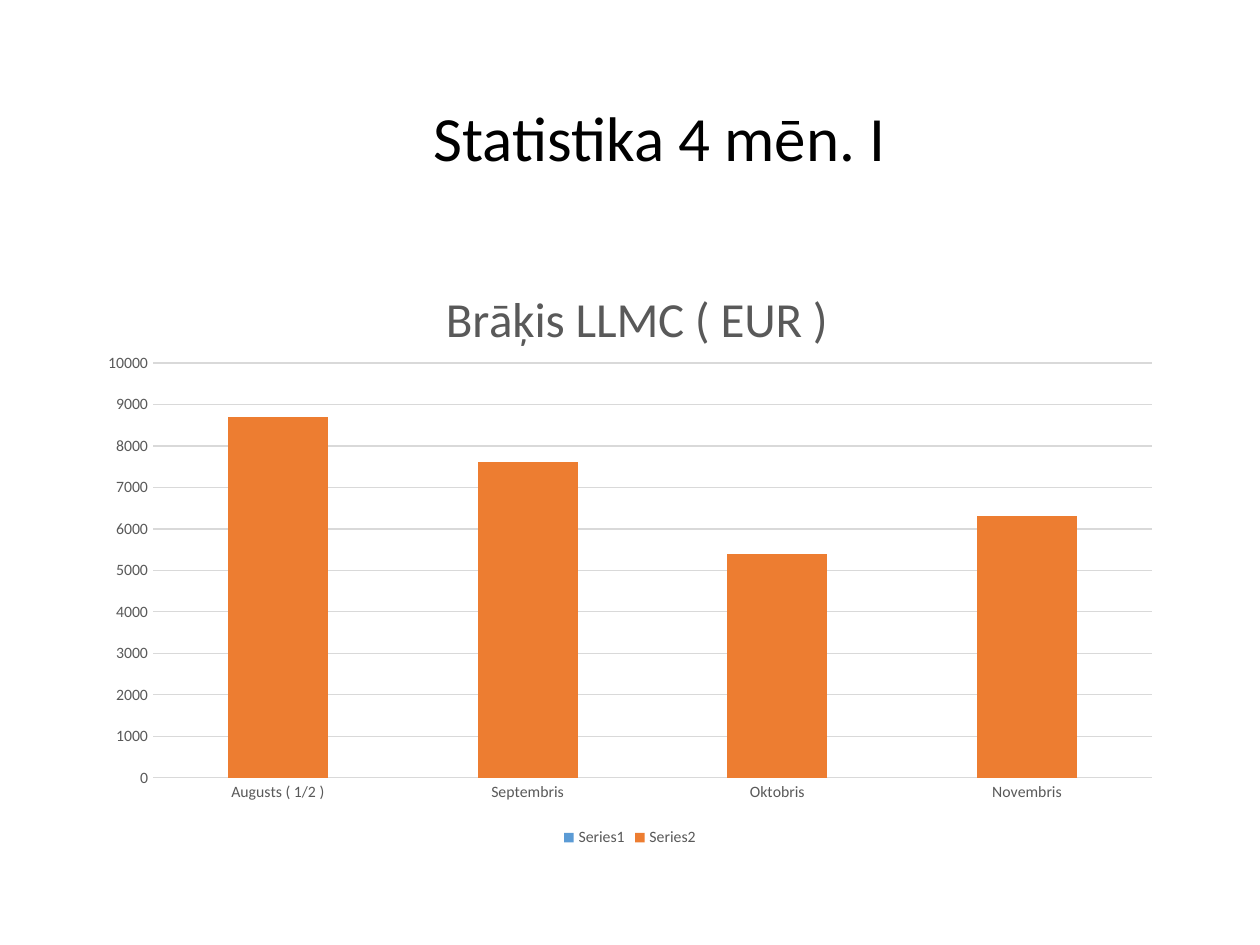
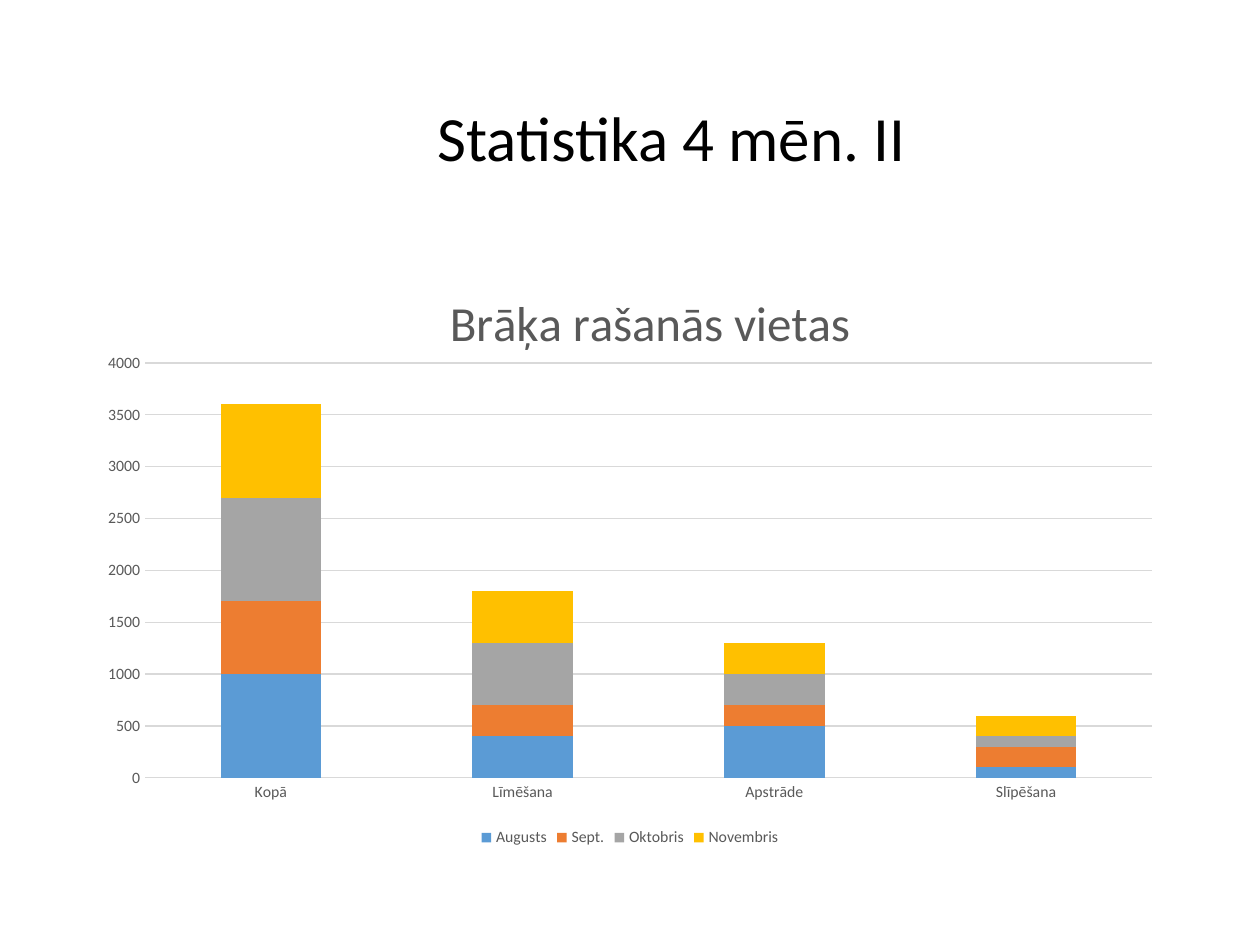
import dataclasses

import lxml.etree
import pptx
import pptx.chart.chart
import pptx.chart.data
import pptx.dml.color
import pptx.enum.chart
import pptx.enum.text
import pptx.oxml.ns
import pptx.slide
import pptx.text.text
import pptx.util

PX_PER_INCH = 126
FONT = "Calibri"
COLORS = {
    "heading": "000000",
    "label": "595959",
    "grid": "D9D9D9",
    "blue": "5B9BD5",
    "orange": "ED7D31",
    "gray": "A5A5A5",
    "gold": "FFC000",
}
HEADING_BOX = (87, 50, 1086, 183)
CHART_BOX = (87, 252, 1086, 600)


@dataclasses.dataclass(frozen=True)
class Month:
    name: str
    color: str
    values: tuple[int | None, ...]


@dataclasses.dataclass(frozen=True)
class Statistics:
    heading: str
    heading_indent: int
    chart_heading: str
    chart_heading_at: tuple[int, int]
    plot_box: tuple[int, int, int, int]
    axis_max: int
    axis_step: int
    categories: tuple[str, ...]
    months: tuple[Month, ...]


STATISTICS = (
    Statistics(
        "Statistika 4 mēn. I", 334,
        "Brāķis LLMC ( EUR )", (437, 277), (153, 363, 999, 415), 10000, 1000,
        ("Augusts ( 1/2 )", "Septembris", "Oktobris", "Novembris"),
        (
            Month("Series1", "blue", (None, None, None, None)),
            Month("Series2", "orange", (8700, 7600, 5400, 6300)),
        ),
    ),
    Statistics(
        "Statistika 4 mēn. II", 338,
        "Brāķa rašanās vietas", (441, 281), (145, 363, 1007, 415), 4000, 500,
        ("Kopā", "Līmēšana", "Apstrāde", "Slīpēšana"),
        (
            Month("Augusts", "blue", (1000, 400, 500, 100)),
            Month("Sept.", "orange", (700, 300, 200, 200)),
            Month("Oktobris", "gray", (1000, 600, 300, 100)),
            Month("Novembris", "gold", (900, 500, 300, 200)),
        ),
    ),
)


def px(length: int) -> int:
    return round(length * 914400 / PX_PER_INCH)


def rgb(name: str) -> pptx.dml.color.RGBColor:
    return pptx.dml.color.RGBColor.from_string(COLORS[name])


def style_font(font: pptx.text.text.Font, size: int, color: str) -> None:
    font.name = FONT
    font.size = pptx.util.Pt(size)
    font.bold = False
    font.color.rgb = rgb(color)


def write_text(frame: pptx.text.text.TextFrame, text: str, *, size: int, color: str,
               indent: int = 0, line_spacing: float | None = None,
               align: pptx.enum.text.PP_ALIGN | None = None) -> None:
    paragraph = frame.paragraphs[0]
    if indent:
        paragraph._p.get_or_add_pPr().set("marL", str(px(indent)))
    if line_spacing:
        paragraph.line_spacing = line_spacing
    if align is not None:
        paragraph.alignment = align
    run = paragraph.add_run()
    run.text = text
    style_font(run.font, size, color)


def manual_layout(left: int, top: int, width: int = 0,
                  height: int = 0) -> lxml.etree._Element:
    qn = pptx.oxml.ns.qn
    chart_left, chart_top, chart_width, chart_height = CHART_BOX
    layout = lxml.etree.Element(qn("c:layout"))
    manual = lxml.etree.SubElement(layout, qn("c:manualLayout"))
    settings = {"xMode": "edge", "yMode": "edge",
                "x": (left - chart_left) / chart_width,
                "y": (top - chart_top) / chart_height}
    if width:
        settings = {"layoutTarget": "inner", **settings,
                    "w": width / chart_width, "h": height / chart_height}
    for tag, value in settings.items():
        lxml.etree.SubElement(manual, qn(f"c:{tag}")).set("val", str(value))
    return layout


def place_chart_parts(chart: pptx.chart.chart.Chart, topic: Statistics) -> None:
    qn = pptx.oxml.ns.qn
    heading = chart.chart_title._element
    plot_area = chart._chartSpace.find(f".//{qn('c:plotArea')}")
    for part in (heading, plot_area):
        for automatic in part.findall(qn("c:layout")):
            part.remove(automatic)
    heading.find(qn("c:tx")).addnext(manual_layout(*topic.chart_heading_at))
    plot_area.insert(0, manual_layout(*topic.plot_box))


def style_axes(chart: pptx.chart.chart.Chart, topic: Statistics) -> None:
    for axis in (chart.category_axis, chart.value_axis):
        axis.major_tick_mark = pptx.enum.chart.XL_TICK_MARK.NONE
        axis.minor_tick_mark = pptx.enum.chart.XL_TICK_MARK.NONE
        axis.format.line.fill.background()
        style_font(axis.tick_labels.font, 9, "label")
    amounts = chart.value_axis
    amounts.minimum_scale = 0
    amounts.maximum_scale = topic.axis_max
    amounts.major_unit = topic.axis_step
    amounts.has_major_gridlines = True
    amounts.major_gridlines.format.line.color.rgb = rgb("grid")
    amounts.major_gridlines.format.line.width = pptx.util.Pt(0.75)


def add_defects_chart(slide: pptx.slide.Slide, topic: Statistics) -> None:
    defects = pptx.chart.data.CategoryChartData()
    defects.categories = topic.categories
    for month in topic.months:
        defects.add_series(month.name, month.values)
    chart = slide.shapes.add_chart(
        pptx.enum.chart.XL_CHART_TYPE.COLUMN_STACKED, *map(px, CHART_BOX), defects
    ).chart
    style_font(chart.font, 10, "heading")

    chart.has_title = True
    write_text(chart.chart_title.text_frame, topic.chart_heading, size=28, color="label")
    chart.chart_title.include_in_layout = False
    style_axes(chart, topic)

    chart.has_legend = True
    chart.legend.position = pptx.enum.chart.XL_LEGEND_POSITION.BOTTOM
    chart.legend.include_in_layout = False
    style_font(chart.legend.font, 9, "label")

    columns = chart.plots[0]
    columns.gap_width = 150
    columns.overlap = 100
    columns.vary_by_categories = False
    for series, month in zip(columns.series, topic.months):
        series.format.fill.solid()
        series.format.fill.fore_color.rgb = rgb(month.color)
    place_chart_parts(chart, topic)


def add_heading(slide: pptx.slide.Slide, topic: Statistics) -> None:
    heading = slide.shapes.title
    heading.left, heading.top, heading.width, heading.height = map(px, HEADING_BOX)
    frame = heading.text_frame
    frame.vertical_anchor = pptx.enum.text.MSO_ANCHOR.MIDDLE
    frame.auto_size = pptx.enum.text.MSO_AUTO_SIZE.NONE
    write_text(frame, topic.heading, size=36, color="heading",
               indent=topic.heading_indent, line_spacing=0.9,
               align=pptx.enum.text.PP_ALIGN.LEFT)


def main() -> None:
    presentation = pptx.Presentation()
    presentation.slide_width = px(1260)
    presentation.slide_height = px(945)
    title_only = presentation.slide_layouts[5]
    for topic in STATISTICS:
        slide = presentation.slides.add_slide(title_only)
        add_heading(slide, topic)
        add_defects_chart(slide, topic)
    presentation.save("out.pptx")


if __name__ == "__main__":
    main()
